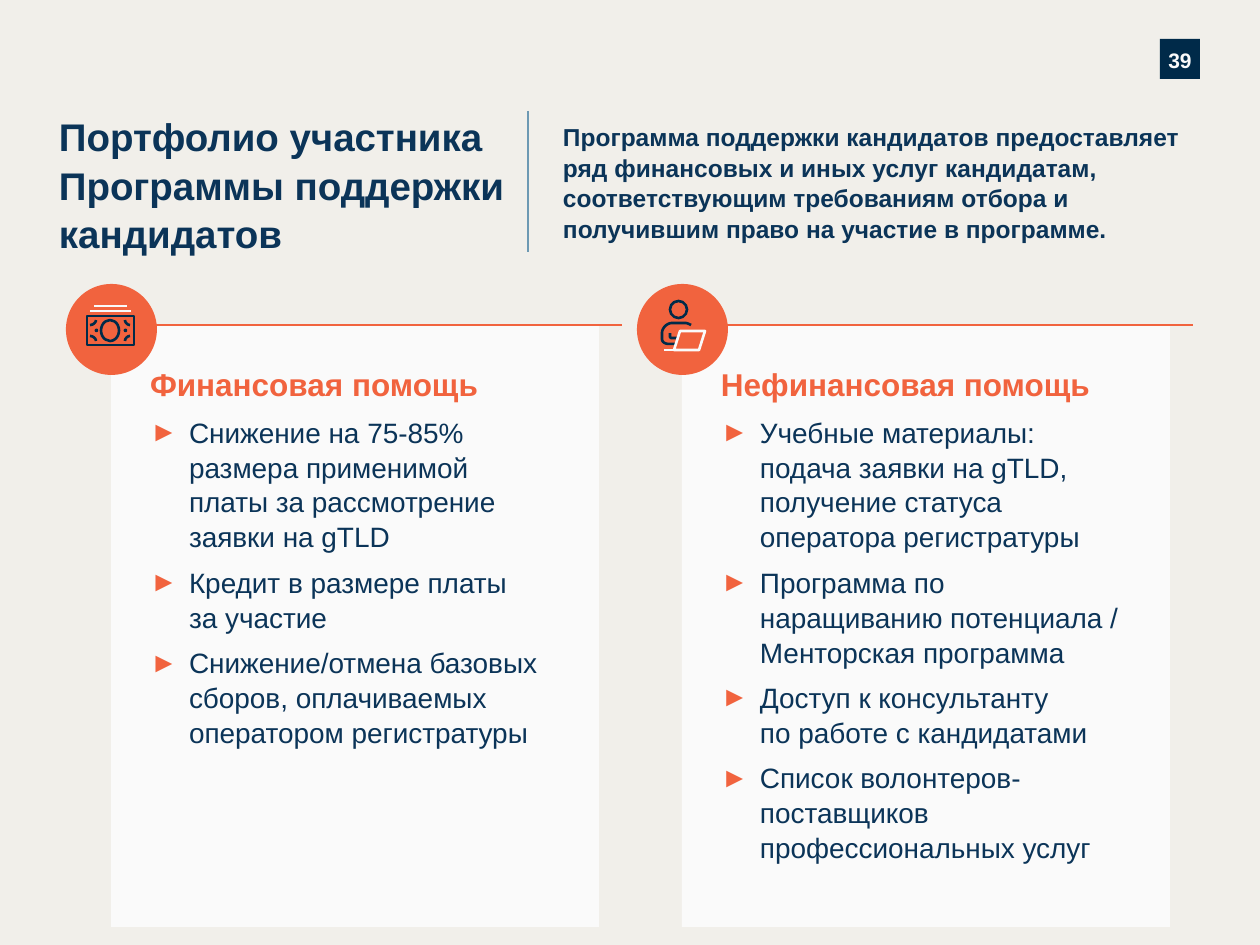
from dataclasses import dataclass

from lxml.etree import SubElement
from pptx import Presentation
from pptx.dml.color import RGBColor as Rgb
from pptx.enum.shapes import MSO_CONNECTOR as Connector, MSO_SHAPE as Shape
from pptx.enum.text import MSO_ANCHOR as Anchor, MSO_AUTO_SIZE as AutoSize, PP_ALIGN as Align
from pptx.oxml.ns import qn
from pptx.util import Emu, Pt


@dataclass(frozen=True)
class Theme:
    font: str = "Arial"
    paper: str = "F1EFEA"
    panel: str = "FAFAFA"
    ink: str = "0B3458"
    navy: str = "002B49"
    badge: str = "002A49"
    accent: str = "F1633E"
    rule: str = "6D99B3"
    title_size: int = 22
    heading_size: int = 18
    item_size: int = 16
    intro_size: int = 14
    badge_size: int = 12
    rule_width: float = 1.25
    icon_width: float = 1.5


THEME = Theme()
EMU_PER_PX = 914400 / 126
CURVE_STEPS = 8

TITLE = "Портфолио участника Программы поддержки кандидатов"
INTRO = (
    "Программа поддержки кандидатов предоставляет ряд финансовых и иных услуг кандидатам, "
    "соответствующим требованиям отбора и получившим право на участие в программе."
)
FINANCIAL = [
    "Снижение на 75-85% размера применимой \nплаты за рассмотрение заявки на gTLD",
    "Кредит в размере платы \nза участие",
    "Снижение/отмена базовых сборов, оплачиваемых оператором регистратуры",
]
NON_FINANCIAL = [
    "Учебные материалы: подача заявки на gTLD, получение статуса оператора регистратуры",
    "Программа по наращиванию потенциала / Менторская программа",
    "Доступ к консультанту \nпо работе с кандидатами",
    "Список волонтеров-поставщиков профессиональных услуг",
]


def px(length):
    return Emu(round(length * EMU_PER_PX))


def apply(target, **values):
    for name, value in values.items():
        setattr(target, name, value)


def place(shape, left, top, width, height):
    apply(shape, left=px(left), top=px(top), width=px(width), height=px(height))


def paint(shape, color):
    shape.shadow.inherit = False
    shape.fill.solid()
    shape.fill.fore_color.rgb = Rgb.from_string(color)
    shape.line.fill.background()


def stroke(shape, color, width):
    shape.line.color.rgb = Rgb.from_string(color)
    shape.line.width = Pt(width)


def set_frame(frame, insets=(0, 0, 0, 0), anchor=Anchor.TOP):
    left, top, right, bottom = map(px, insets)
    apply(frame, word_wrap=True, auto_size=AutoSize.NONE, vertical_anchor=anchor,
          margin_left=left, margin_top=top, margin_right=right, margin_bottom=bottom)


def write(paragraph, text, size, color, bold=True, align=Align.LEFT, spacing=1.04, before=0):
    paragraph.text = text
    apply(paragraph, alignment=align, line_spacing=spacing, space_before=Pt(before))
    for run in paragraph.runs:
        apply(run.font, name=THEME.font, size=Pt(size), bold=bold)
        run.font.color.rgb = Rgb.from_string(color)


def set_bullet(paragraph, indent=0):
    properties = paragraph._p.get_or_add_pPr()
    properties.set("marL", str(px(indent)))
    properties.set("indent", str(-px(indent)))
    if not indent:
        SubElement(properties, qn("a:buNone"))
        return
    SubElement(SubElement(properties, qn("a:buClr")), qn("a:srgbClr"), val=THEME.accent)
    SubElement(properties, qn("a:buFont"), typeface=THEME.font)
    SubElement(properties, qn("a:buChar"), char="►")


def add_rule(shapes, start, end, color, width=THEME.rule_width):
    rule = shapes.add_connector(Connector.STRAIGHT, *map(px, start + end))
    stroke(rule, color, width)
    SubElement(rule._element.spPr, qn("a:effectLst"))


def curve_points(start, controls):
    points = (start, *zip(controls[::2], controls[1::2]))
    for step in range(1, CURVE_STEPS + 1):
        t = step / CURVE_STEPS
        weights = ((1 - t) ** 3, 3 * t * (1 - t) ** 2, 3 * t * t * (1 - t), t ** 3)
        yield tuple(sum(w * p[axis] for w, p in zip(weights, points)) for axis in (0, 1))


def add_outline(shapes, origin, steps, color, closed=False):
    points = [steps[0]]
    for step in steps[1:]:
        points.extend([step] if len(step) == 2 else curve_points(points[-1], step))
    start, *rest = [(px(origin[0] + x), px(origin[1] + y)) for x, y in points]
    builder = shapes.build_freeform(*start, scale=1.0)
    builder.add_line_segments(rest, close=closed)
    outline = builder.convert_to_shape()
    outline.shadow.inherit = False
    outline.fill.background()
    stroke(outline, color, THEME.icon_width)


def add_ring(shapes, origin, box, kind=Shape.OVAL):
    left, top, width, height = box
    ring = shapes.add_shape(kind, *map(px, (origin[0] + left, origin[1] + top, width, height)))
    ring.shadow.inherit = False
    ring.fill.background()
    stroke(ring, THEME.navy, THEME.icon_width)


def add_stripe(shapes, origin, left, right, height):
    x, y = origin
    add_rule(shapes, (x + left, y + height), (x + right, y + height),
             THEME.panel, THEME.icon_width)


def draw_banknote(shapes, origin):
    add_ring(shapes, origin, (21, 32, 47, 29), Shape.RECTANGLE)
    add_ring(shapes, origin, (35, 36, 18, 21))
    for edge, inner in ((24, 30), (64, 59)):
        add_ring(shapes, origin, (inner, 46, 1, 1))
        for outer, end in ((41, 36), (52, 57)):
            middle = (edge + inner) / 2, (outer + end) / 2
            arc = [(edge, outer), (middle[0], outer, inner, middle[1], inner, end)]
            add_outline(shapes, origin, arc, THEME.navy)
    add_stripe(shapes, origin, 24, 65, 27)
    add_stripe(shapes, origin, 28, 61, 22)


def draw_person(shapes, origin):
    add_ring(shapes, origin, (33, 17, 17, 17))
    add_outline(shapes, origin, [(40, 54), (34, 54), (33, 53), (33, 49)], THEME.navy)
    torso = [(54, 41), (52, 40, 50, 39, 48, 39), (35, 39), (30, 39, 25, 44, 25, 49),
             (25, 55), (25, 58, 28, 60, 32, 60), (39, 60)]
    add_outline(shapes, origin, torso, THEME.navy)
    add_stripe(shapes, origin, 27, 37, 66)
    laptop = [(43, 47), (37, 66), (62, 66), (68, 47)]
    add_outline(shapes, origin, laptop, THEME.panel, closed=True)


def add_header(slide, left, top):
    title = slide.shapes.title
    place(title, left, top, 488, 116)
    set_frame(title.text_frame)
    write(title.text_frame.paragraphs[0], TITLE, THEME.title_size, THEME.ink, spacing=1.05)
    intro = slide.shapes.add_textbox(*map(px, (left + 504, top + 10, 622, 118)))
    set_frame(intro.text_frame)
    write(intro.text_frame.paragraphs[0], INTRO, THEME.intro_size, THEME.ink)
    add_rule(slide.shapes, (left + 469, top), (left + 469, top + 141), THEME.rule)


def add_page_badge(slide, left, top, side, number):
    badge = slide.shapes.add_shape(Shape.RECTANGLE, *map(px, (left, top, side, side)))
    paint(badge, THEME.badge)
    set_frame(badge.text_frame, anchor=Anchor.MIDDLE)
    write(badge.text_frame.paragraphs[0], number, THEME.badge_size, THEME.panel,
          align=Align.CENTER, spacing=1.08)


def add_card(slide, card, left, top, heading, items, right_inset, draw_icon):
    place(card, left, top, 488, 602)
    paint(card, THEME.panel)
    frame = card.text_frame
    set_frame(frame, (39, 39, right_inset, 39))
    write(frame.paragraphs[0], heading, THEME.heading_size, THEME.accent)
    set_bullet(frame.paragraphs[0])
    for item in items:
        paragraph = frame.add_paragraph()
        write(paragraph, item, THEME.item_size, THEME.ink, bold=False, before=6)
        set_bullet(paragraph, 39)
    add_rule(slide.shapes, (left, top), (left + 511, top), THEME.accent)
    origin = left - 45, top - 41
    disc = slide.shapes.add_shape(Shape.OVAL, *map(px, (*origin, 91, 91)))
    paint(disc, THEME.accent)
    draw_icon(slide.shapes.add_group_shape().shapes, origin)


def main():
    deck = Presentation()
    apply(deck, slide_width=px(1260), slide_height=px(945))
    slide = deck.slides.add_slide(deck.slide_layouts[3])
    slide.background.fill.solid()
    slide.background.fill.fore_color.rgb = Rgb.from_string(THEME.paper)
    financial, non_financial = list(slide.placeholders)[1:]
    add_page_badge(slide, 1160, 39, 40, "39")
    add_header(slide, 59, 111)
    add_card(slide, financial, 111, 325, "Финансовая помощь", FINANCIAL, 30, draw_banknote)
    add_card(slide, non_financial, 682, 325, "Нефинансовая помощь", NON_FINANCIAL, 44, draw_person)
    deck.save("out.pptx")


if __name__ == "__main__":
    main()
